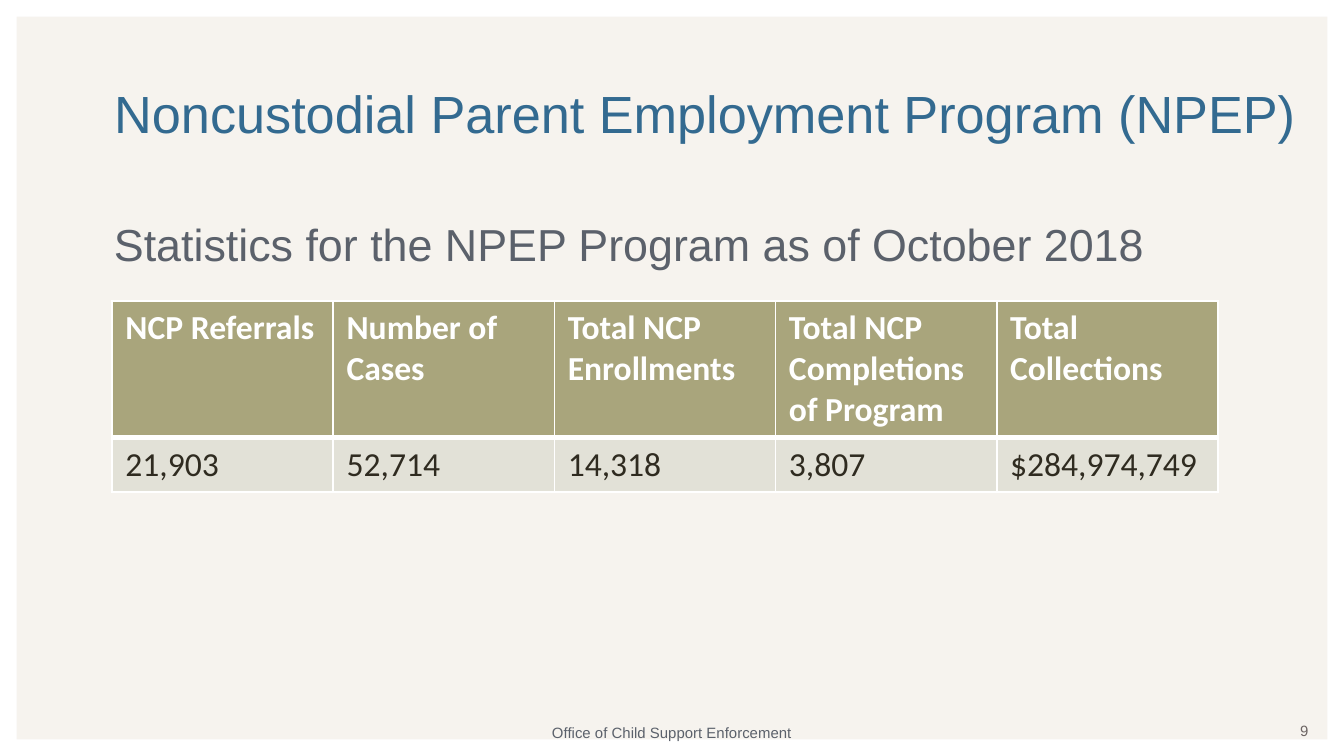
from lxml import etree
from pptx import Presentation
from pptx.dml.color import RGBColor
from pptx.enum.shapes import MSO_SHAPE
from pptx.enum.text import MSO_ANCHOR, MSO_AUTO_SIZE, PP_ALIGN
from pptx.oxml.ns import qn
from pptx.util import Pt

PX = 9525
LEFT, CENTER, RIGHT = PP_ALIGN.LEFT, PP_ALIGN.CENTER, PP_ALIGN.RIGHT
TOP, MIDDLE = MSO_ANCHOR.TOP, MSO_ANCHOR.MIDDLE

WHITE = RGBColor(0xFF, 0xFF, 0xFF)
CREAM = RGBColor(0xF6, 0xF3, 0xEE)
BLUE = RGBColor(0x33, 0x6A, 0x90)
SLATE = RGBColor(0x5B, 0x61, 0x6B)
GRAY = RGBColor(0x6C, 0x64, 0x63)
OLIVE = RGBColor(0xA9, 0xA5, 0x7C)
PALE_OLIVE = RGBColor(0xE2, 0xE1, 0xD7)
DARK = RGBColor(0x2F, 0x2B, 0x20)


def write_text(shape, box, text, size, color, align=LEFT, anchor=TOP):
    """Place a text shape at box (left, top, width, height in px) and fill it."""
    shape.left, shape.top, shape.width, shape.height = [n * PX for n in box]
    frame = shape.text_frame
    frame.text = text
    frame.word_wrap = True
    frame.auto_size = MSO_AUTO_SIZE.NONE
    frame.vertical_anchor = anchor
    paragraph = frame.paragraphs[0]
    paragraph.alignment = align
    font = paragraph.runs[0].font
    font.name, font.size, font.color.rgb = "Arial", Pt(size), color


def add_border(cell, side, points):
    properties = cell._tc.get_or_add_tcPr()
    line = etree.SubElement(properties, qn(f"a:ln{side}"), w=str(Pt(points)))
    fill = etree.SubElement(line, qn("a:solidFill"))
    etree.SubElement(fill, qn("a:srgbClr"), val=str(WHITE))


presentation = Presentation()
presentation.slide_width = 960 * PX
presentation.slide_height = 540 * PX
slide = presentation.slides.add_slide(presentation.slide_layouts[5])
slide.background.fill.solid()
slide.background.fill.fore_color.rgb = CREAM

border = slide.shapes.add_shape(MSO_SHAPE.FRAME, 0, 0, 960 * PX, 540 * PX)
border.adjustments[0] = 0.022
border.fill.solid()
border.fill.fore_color.rgb = WHITE
border.line.fill.background()
border.shadow.inherit = False

write_text(slide.shapes.title, (72, 53, 888, 55),
           "Noncustodial Parent Employment Program (NPEP)", 28, BLUE, anchor=MIDDLE)

text_boxes = [
    ((72, 150, 824, 48), "Statistics for the NPEP Program as of October 2018", 24, SLATE, LEFT, TOP),
    ((328, 512, 304, 23), "Office of Child Support Enforcement", 8, SLATE, CENTER, TOP),
    ((720, 510, 224, 23), "9", 8, GRAY, RIGHT, MIDDLE),
]
for box, *content in text_boxes:
    write_text(slide.shapes.add_textbox(0, 0, 0, 0), box, *content)

statistics = [
    ("NCP Referrals", "21,903"),
    ("Number of Cases", "52,714"),
    ("Total NCP Enrollments", "14,318"),
    ("Total NCP Completions of Program", "3,807"),
    ("Total Collections", "$284,974,749"),
]
row_styles = [(96, OLIVE, WHITE, True), (39, PALE_OLIVE, DARK, False)]
column_width = 792 // len(statistics)
table = slide.shapes.add_table(
    2, len(statistics), 80 * PX, 215 * PX, 792 * PX, 135 * PX).table

for row, (height, fill_color, text_color, is_header) in enumerate(row_styles):
    table.rows[row].height = height * PX
    for column, values in enumerate(statistics):
        table.columns[column].width = column_width * PX
        cell = table.cell(row, column)
        cell.text = values[row]
        font = cell.text_frame.paragraphs[0].runs[0].font
        font.name, font.size, font.bold = "Calibri", Pt(18), is_header
        font.color.rgb = text_color
        for side in "LRTB":
            is_divider = side == ("B" if is_header else "T")
            add_border(cell, side, 3 if is_divider else 1)
        cell.fill.solid()
        cell.fill.fore_color.rgb = fill_color

presentation.save("out.pptx")
